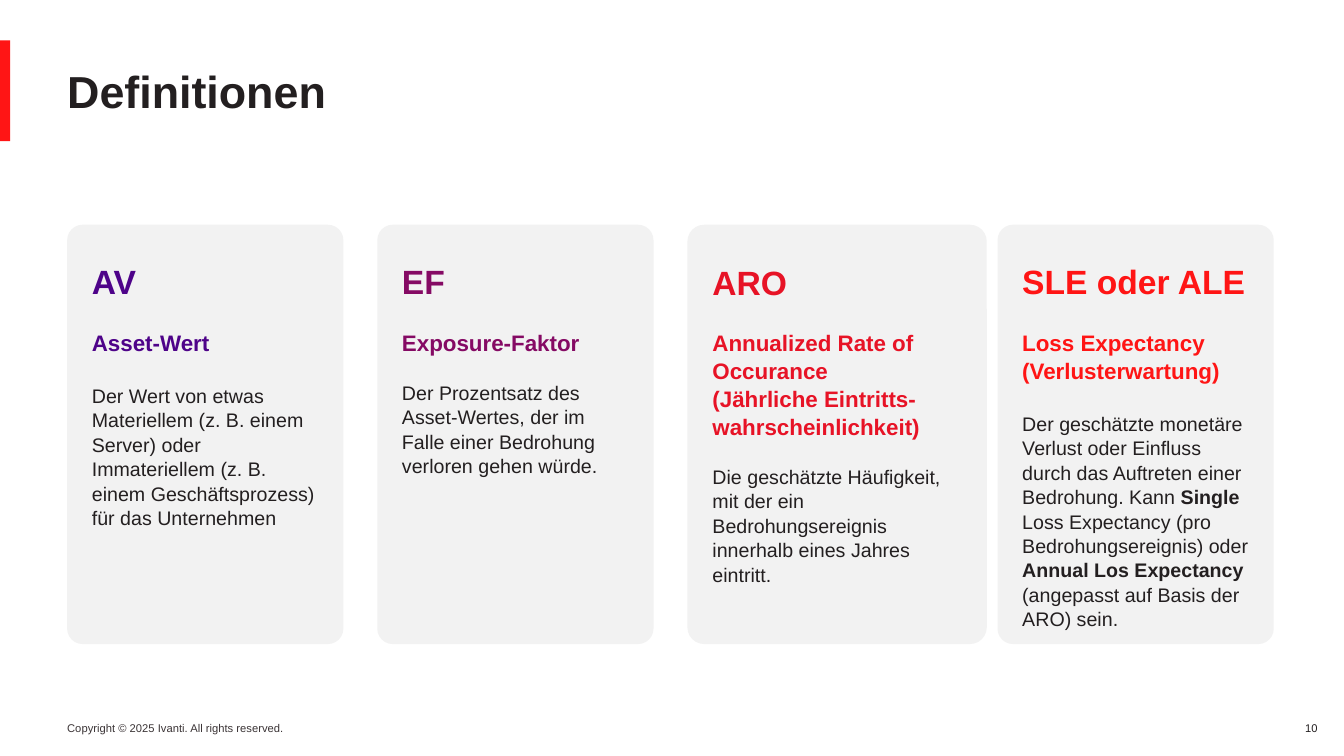
"""Build the slide that defines four risk terms in a row of cards."""
from pptx import Presentation
from pptx.dml.color import RGBColor
from pptx.enum.shapes import MSO_SHAPE
from pptx.enum.text import MSO_ANCHOR, PP_ALIGN
from pptx.util import Inches, Pt

RECT, ROUND = MSO_SHAPE.RECTANGLE, MSO_SHAPE.ROUNDED_RECTANGLE
TOP, MIDDLE = MSO_ANCHOR.TOP, MSO_ANCHOR.MIDDLE
LEFT, RIGHT = PP_ALIGN.LEFT, PP_ALIGN.RIGHT

INK = RGBColor(0x23, 0x1F, 0x20)
GREY = RGBColor(0x3B, 0x34, 0x36)
PALE = RGBColor(0xF2, 0xF2, 0xF2)
VIOLET = RGBColor(0x4E, 0x03, 0x89)
PLUM = RGBColor(0x85, 0x0A, 0x64)
CRIMSON = RGBColor(0xE7, 0x13, 0x26)
RED = RGBColor(0xFF, 0x15, 0x15)

COLS, ROWS = 40, 75
MARGIN, STEP, WIDE = 2, 9.23, 8.22
CARDS = [
    ("AV", "Asset-Wert",
     "Der Wert von etwas Materiellem (z. B. einem Server) oder Immateriellem "
     "(z. B. einem Geschäftsprozess) für das Unternehmen",
     VIOLET, WIDE, 19.1),
    ("EF", "Exposure-Faktor",
     "Der Prozentsatz des Asset-Wertes, der im Falle einer Bedrohung "
     "verloren gehen würde.",
     PLUM, WIDE, 16.8),
    ("ARO", "Annualized Rate of Occurance \v(Jährliche Eintritts-wahrscheinlichkeit)",
     "Die geschätzte Häufigkeit, mit der ein Bedrohungsereignis innerhalb "
     "eines Jahres eintritt.",
     CRIMSON, 8.91, 16.8),
    ("SLE oder ALE", "Loss Expectancy (Verlusterwartung)",
     "Der geschätzte monetäre Verlust oder Einfluss durch das Auftreten einer "
     "Bedrohung. Kann *Single* Loss Expectancy (pro Bedrohungsereignis) oder "
     "*Annual Los Expectancy *(angepasst auf Basis der ARO) sein.",
     RED, WIDE, 19.1),
]


class Deck:
    """Hold the style and the current slide."""

    def __init__(self):
        self.show = Presentation()
        self.show.slide_width, self.show.slide_height = Inches(13.33), Inches(7.5)
        self.slide = self.show.slides.add_slide(self.show.slide_layouts[6])
        self.face = "Arial"

    def place(self, col, row, wide, high):
        """Turn grid units into slide lengths."""
        unit, line = self.show.slide_width / COLS, self.show.slide_height / ROWS
        return [round(n) for n in (col * unit, row * line, wide * unit, high * line)]

    def style(self, run, size, color, bold):
        """Format one run."""
        font = run.font
        font.name, font.size, font.bold = self.face, Pt(size), bold
        font.color.rgb = color

    def inset(self, frame, side, right, edge):
        """Set the inner margins of a text frame."""
        frame.margin_left, frame.margin_right = Inches(side), Inches(right)
        frame.margin_top = frame.margin_bottom = Inches(edge)

    def text(self, spot, words, size, color, bold=False, align=LEFT,
             anchor=TOP, edge=0.05, wrap=True):
        """Add a text box with one line."""
        frame = self.slide.shapes.add_textbox(*self.place(*spot)).text_frame
        frame.word_wrap, frame.vertical_anchor = wrap, anchor
        self.inset(frame, 0, 0.1, edge)
        frame.text = words
        frame.paragraphs[0].alignment = align
        self.style(frame.paragraphs[0].runs[0], size, color, bold)

    def block(self, kind, spot, color):
        """Add a plain filled shape."""
        shape = self.slide.shapes.add_shape(kind, *self.place(*spot))
        shape.shadow.inherit = False
        shape.fill.solid()
        shape.fill.fore_color.rgb = color
        shape.line.fill.background()
        return shape

    def card(self, spot, term, name, body, color, gap):
        """Add a rounded card with a term, its name and its meaning."""
        shape = self.block(ROUND, spot, PALE)
        shape.adjustments[0] = 0.056
        frame = shape.text_frame
        frame.word_wrap, frame.vertical_anchor = True, TOP
        self.inset(frame, 0.2, 0.2, 0.3)
        frame.margin_bottom = 0
        frame.text = "\n".join((term, name, ""))
        head, label, note = frame.paragraphs
        for para, space in ((head, 0), (label, 19.1), (note, gap)):
            para.alignment, para.line_spacing = LEFT, 1.04
            para.space_before = Pt(space)
        for para, size in ((head, 24), (label, 16)):
            for run in para.runs:
                self.style(run, size, color, True)
        for index, part in enumerate(body.split("*")):
            run = note.add_run()
            run.text = part
            self.style(run, 14, INK, index % 2 == 1)

    def save(self):
        """Write the file."""
        self.show.save("out.pptx")


def main():
    """Compose the slide."""
    deck = Deck()
    deck.text((MARGIN, 71.1, 6.84, 2.4),
              "Copyright © 2025 Ivanti. All rights reserved.", 8, GREY, wrap=False)
    deck.block(RECT, (0, 4, 0.3, 10), RED)
    deck.text((38.07, 71.1, 1.44, 2.4), "10", 8, INK, align=RIGHT)
    deck.text((MARGIN, 5.9, 36, 6.2), "Definitionen", 32, INK, True,
              anchor=MIDDLE, edge=0)
    for index, (term, name, body, color, wide, gap) in enumerate(CARDS):
        spot = (MARGIN + index * STEP, 22.3, wide, 41.6)
        deck.card(spot, term, name, body, color, gap)
    deck.save()


if __name__ == "__main__":
    main()
